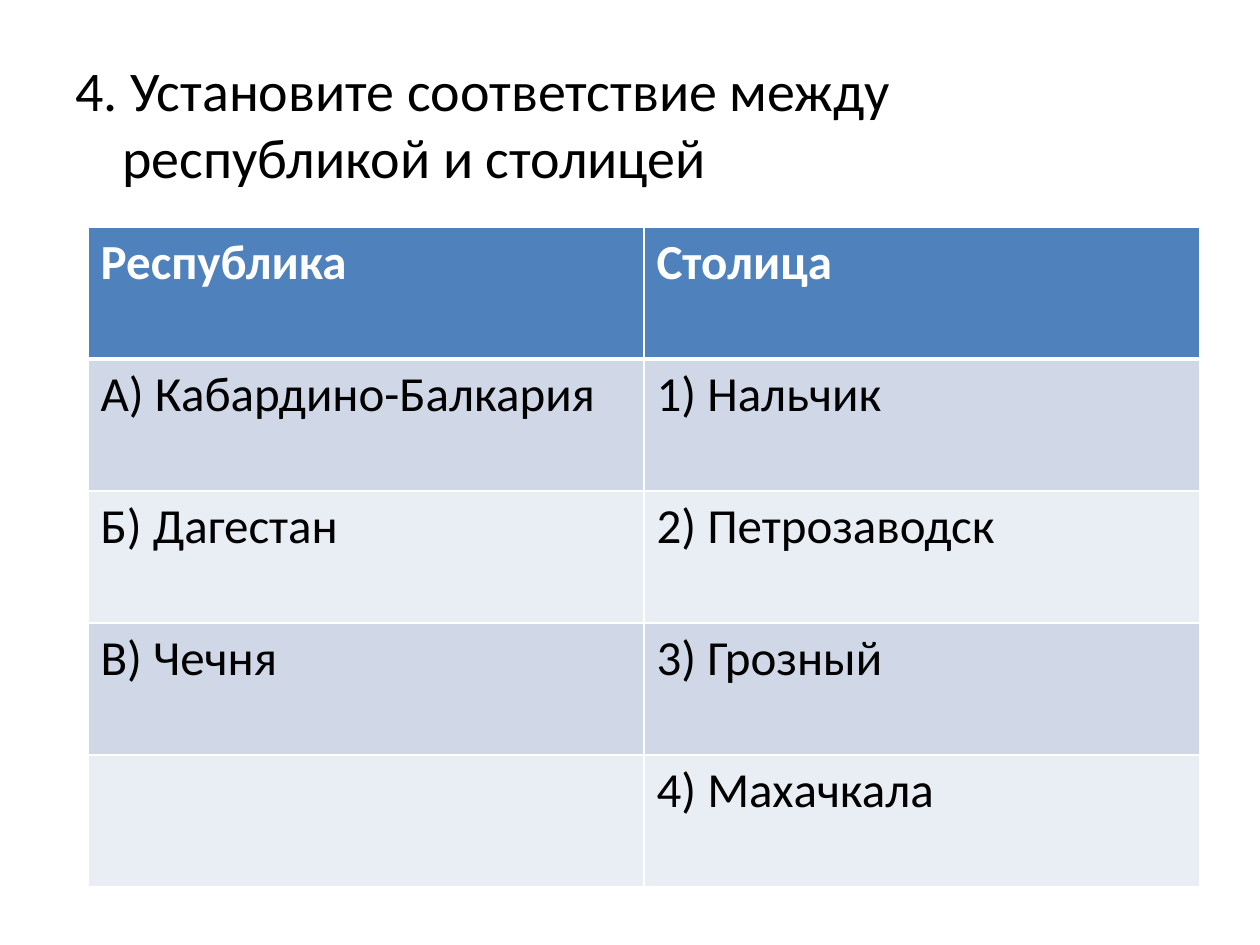
from dataclasses import dataclass

from lxml.etree import SubElement
from pptx import Presentation
from pptx.dml.color import RGBColor
from pptx.oxml.ns import qn
from pptx.util import Pt

SCALE = 914400 // 126


@dataclass(frozen=True)
class Theme:
    font: str = "Calibri"
    title_size: int = 32
    cell_size: int = 28
    text: str = "000000"
    white: str = "FFFFFF"
    header: str = "4F81BD"
    bands: tuple = ("D0D8E8", "E9EDF4")
    border: int = 1
    header_border: int = 3


THEME = Theme()
QUESTION = "4.\u00a0Установите соответствие между республикой и столицей"
ROWS = [
    ("Республика", "Столица"),
    ("А) Кабардино-Балкария", "1) Нальчик"),
    ("Б) Дагестан", "2) Петрозаводск"),
    ("В) Чечня", "3) Грозный"),
    ("", "4) Махачкала"),
]


def px(value):
    return value * SCALE


def style(font, size, color, bold=False):
    font.name = THEME.font
    font.size = Pt(size)
    font.bold = bold
    font.color.rgb = RGBColor.from_string(color)


def add_question(page, left, top, width, height):
    box = page.shapes.add_textbox(px(left), px(top), px(width), px(height))
    box.text_frame.word_wrap = True
    para = box.text_frame.paragraphs[0]
    para.text = QUESTION
    para.space_before = Pt(THEME.title_size * 0.2)
    properties = para._p.get_or_add_pPr()
    properties.set("marL", str(px(47)))
    properties.set("indent", str(px(-47)))
    style(para.runs[0].font, THEME.title_size, THEME.text)


def set_borders(cell, bottom, top):
    properties = cell._tc.get_or_add_tcPr()
    widths = {"lnL": THEME.border, "lnR": THEME.border, "lnT": top, "lnB": bottom}
    for position, (name, width) in enumerate(widths.items()):
        line = SubElement(properties, qn(f"a:{name}"), w=str(Pt(width)))
        fill = SubElement(line, qn("a:solidFill"))
        SubElement(fill, qn("a:srgbClr"), val=THEME.white)
        properties.insert(position, line)


def fill_cell(cell, text, row):
    is_header = row == 0
    color = THEME.header if is_header else THEME.bands[(row - 1) % 2]
    cell.fill.solid()
    cell.fill.fore_color.rgb = RGBColor.from_string(color)
    set_borders(
        cell,
        bottom=THEME.header_border if is_header else THEME.border,
        top=THEME.header_border if row == 1 else THEME.border,
    )
    para = cell.text_frame.paragraphs[0]
    para.text = text
    text_color = THEME.white if is_header else THEME.text
    for font in [para.font, *(span.font for span in para.runs)]:
        style(font, THEME.cell_size, text_color, is_header)


def add_matching_table(page, left, top, column_width, row_height):
    row_count, column_count = len(ROWS), len(ROWS[0])
    table = page.shapes.add_table(
        row_count, column_count, px(left), px(top),
        px(column_width * column_count), px(row_height * row_count),
    ).table
    for row, texts in enumerate(ROWS):
        for column, text in enumerate(texts):
            fill_cell(table.cell(row, column), text, row)


def main():
    deck = Presentation()
    deck.slide_width, deck.slide_height = px(1260), px(945)
    page = deck.slides.add_slide(deck.slide_layouts[6])
    add_question(page, 63, 49, 1134, 857)
    add_matching_table(page, 88, 227, 556, 132)
    deck.save("out.pptx")


if __name__ == "__main__":
    main()
